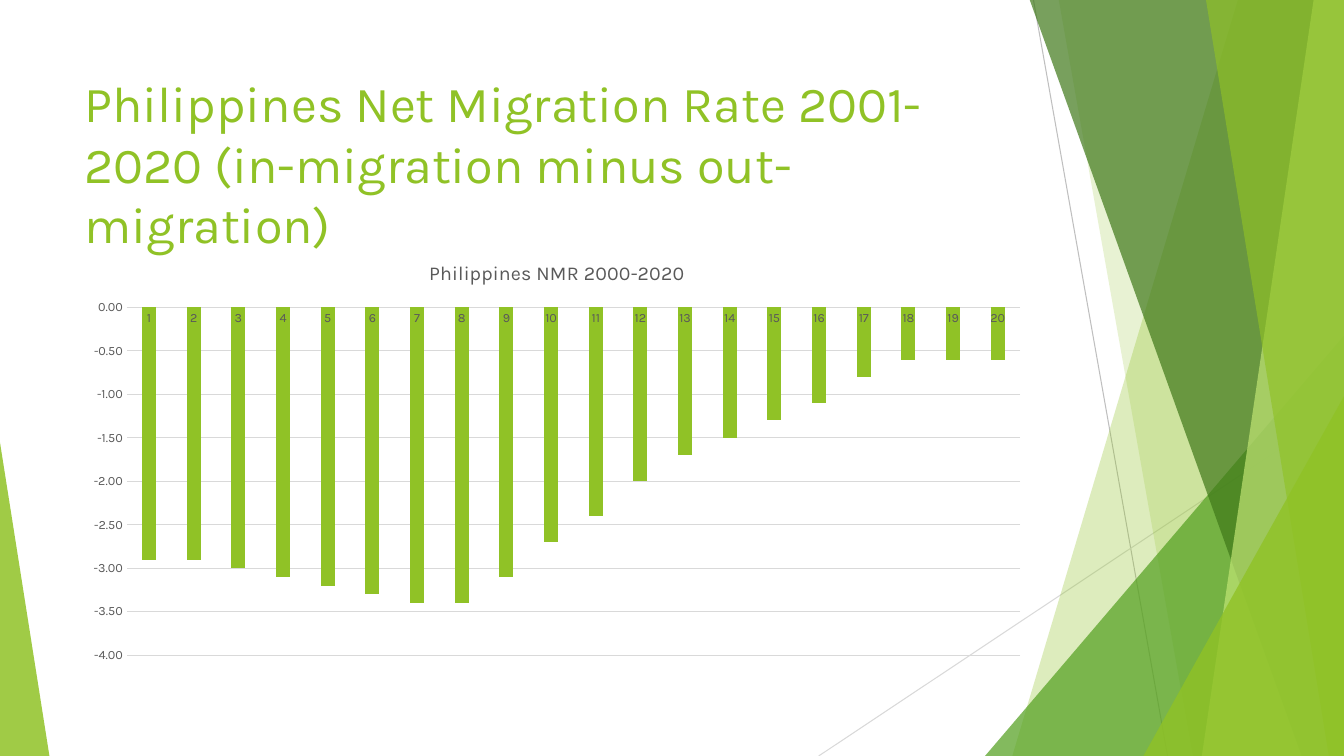
from lxml import etree
from pptx import Presentation
from pptx import util as u
from pptx.chart import data as chart_data
from pptx.dml.color import RGBColor
from pptx.enum import chart as ch, shapes, text
from pptx.oxml import parse_xml
from pptx.oxml.ns import nsdecls, qn

GREEN = RGBColor(0x90, 0xC2, 0x26)
LEAF = RGBColor(0x54, 0xA0, 0x21)
FOREST = RGBColor(0x3F, 0x78, 0x19)
LIME = RGBColor(0xC0, 0xE4, 0x74)
SILVER = RGBColor(0xBF, 0xBF, 0xBF)
PALE = RGBColor(0xD9, 0xD9, 0xD9)
GRAY = RGBColor(0x59, 0x59, 0x59)
FONT = "Karla"

WIDTH, HEIGHT = 13.33, 7.5
TOP = -0.01

TITLE = "Philippines Net Migration Rate 2001-2020 (in-migration minus out-migration)"
TITLE_BOX = (0.74, 0.67, 9.4, 1.44)
CHART_TITLE = "Philippines NMR 2000-2020"
CHART_BOX = (0.74, 2.41, 9.57, 4.24)
PLOT_BOX = (1.26, 3.05, 8.86, 3.45)
RATES = [-2.9, -2.9, -3, -3.1, -3.2, -3.3, -3.4, -3.4, -3.1, -2.7,
         -2.4, -2, -1.7, -1.5, -1.3, -1.1, -0.8, -0.6, -0.6, -0.6]

LINES = [((10.25, 0), (11.58, HEIGHT), SILVER), ((WIDTH, 4.03), (8.12, HEIGHT), PALE)]
FACETS = [
    ("band", (12.28, 10.04), GREEN, 30),
    ("band", (10.5, 11.83), GREEN, 20),
    ("triangle", (9.77, 3.33, 3.56, 4.17, 1), LEAF, 72),
    ("band", (10.21, 12.91), FOREST, 70),
    ("band", (13.03, 11.92), LIME, 70),
    ("band", (11.96, 13.18), GREEN, 65),
    ("triangle", (11.34, 3.93, 1.99, 3.57, 1), GREEN, 80),
    ("triangle", (0, 4.39, 0.49, 3.11, 0), GREEN, 85),
]


def inches(values):
    return [u.Inches(value) for value in values]


def set_font(font, size, color):
    for name, value in {"name": FONT, "size": u.Pt(size), "bold": False}.items():
        setattr(font, name, value)
    font.color.rgb = color


def add_line(page, start, end, color):
    line = page.shapes.add_connector(shapes.MSO_CONNECTOR.STRAIGHT, *inches(start + end))
    line.line.color.rgb = color
    line.line.width = u.Pt(0.75)
    etree.SubElement(line._element.spPr, qn("a:effectLst"))


def add_facet(page, kind, geometry, color, opacity):
    if kind == "band":
        upper, lower = geometry
        builder = page.shapes.build_freeform(*inches((upper, TOP)))
        corners = [(WIDTH, TOP), (WIDTH, HEIGHT), (lower, HEIGHT)]
        builder.add_line_segments([inches(corner) for corner in corners], close=True)
        facet = builder.convert_to_shape()
    else:
        *frame, apex = geometry
        facet = page.shapes.add_shape(shapes.MSO_SHAPE.ISOSCELES_TRIANGLE, *inches(frame))
        facet.adjustments[0] = apex
    facet.shadow.inherit = False
    facet.line.fill.background()
    facet.fill.solid()
    facet.fill.fore_color.rgb = color
    color_node = facet._element.spPr.find(qn("a:solidFill"))[0]
    etree.SubElement(color_node, qn("a:alpha"), val=str(opacity * 1000))


def add_title(page):
    box = page.shapes.add_textbox(*inches(TITLE_BOX))
    frame = box.text_frame
    for name, value in {"word_wrap": True, "vertical_anchor": text.MSO_ANCHOR.TOP,
                        "auto_size": text.MSO_AUTO_SIZE.NONE}.items():
        setattr(frame, name, value)
    span = frame.paragraphs[0].add_run()
    span.text = TITLE
    set_font(span.font, 36, GREEN)


def place_plot(chart):
    left, top, width, height = CHART_BOX
    plot_left, plot_top, plot_width, plot_height = PLOT_BOX
    shares = {"x": (plot_left - left) / width, "y": (plot_top - top) / height,
              "w": plot_width / width, "h": plot_height / height}
    modes = "".join(f'<c:{side}Mode val="edge"/>' for side in "xy")
    sizes = "".join(f'<c:{side} val="{share:.3f}"/>' for side, share in shares.items())
    layout = parse_xml(f'<c:layout {nsdecls("c")}><c:manualLayout>'
                       f'<c:layoutTarget val="inner"/>{modes}{sizes}'
                       '</c:manualLayout></c:layout>')
    area = chart._chartSpace.chart.plotArea
    for old in area.findall(qn("c:layout")):
        area.remove(old)
    area.insert(0, layout)


def add_rate_chart(page):
    rates = chart_data.CategoryChartData(number_format="0.00")
    rates.categories = [str(number) for number in range(1, len(RATES) + 1)]
    rates.add_series("Series 1", RATES)
    chart = page.shapes.add_chart(ch.XL_CHART_TYPE.COLUMN_CLUSTERED,
                                  *inches(CHART_BOX), rates).chart
    set_font(chart.font, 10, GRAY)
    chart.has_legend = False
    chart.has_title = True
    heading = chart.chart_title.text_frame
    heading.text = CHART_TITLE
    set_font(heading.paragraphs[0].runs[0].font, 14, GRAY)
    chart.chart_title.include_in_layout = False

    plot = chart.plots[0]
    for name, value in {"gap_width": 219, "overlap": -27, "vary_by_categories": False}.items():
        setattr(plot, name, value)
    bars = plot.series[0]
    bars.invert_if_negative = False
    bars.format.fill.solid()
    bars.format.fill.fore_color.rgb = GREEN

    years, scale = chart.category_axis, chart.value_axis
    for axis in (years, scale):
        axis.major_tick_mark = axis.minor_tick_mark = ch.XL_TICK_MARK.NONE
        set_font(axis.tick_labels.font, 9, GRAY)
    for name, value in {"minimum_scale": -4, "maximum_scale": 0, "major_unit": 0.5,
                        "has_major_gridlines": True}.items():
        setattr(scale, name, value)
    scale.tick_labels.number_format = "0.00"
    scale.tick_labels.number_format_is_linked = False
    scale.format.line.fill.background()
    for rule in (years.format.line, scale.major_gridlines.format.line):
        rule.color.rgb = PALE
        rule.width = u.Pt(0.75)
    place_plot(chart)


def main():
    deck = Presentation()
    deck.slide_width, deck.slide_height = inches((WIDTH, HEIGHT))
    page = deck.slides.add_slide(deck.slide_layouts[6])
    for line in LINES:
        add_line(page, *line)
    for facet in FACETS:
        add_facet(page, *facet)
    add_title(page)
    add_rate_chart(page)
    deck.save("out.pptx")


if __name__ == "__main__":
    main()
